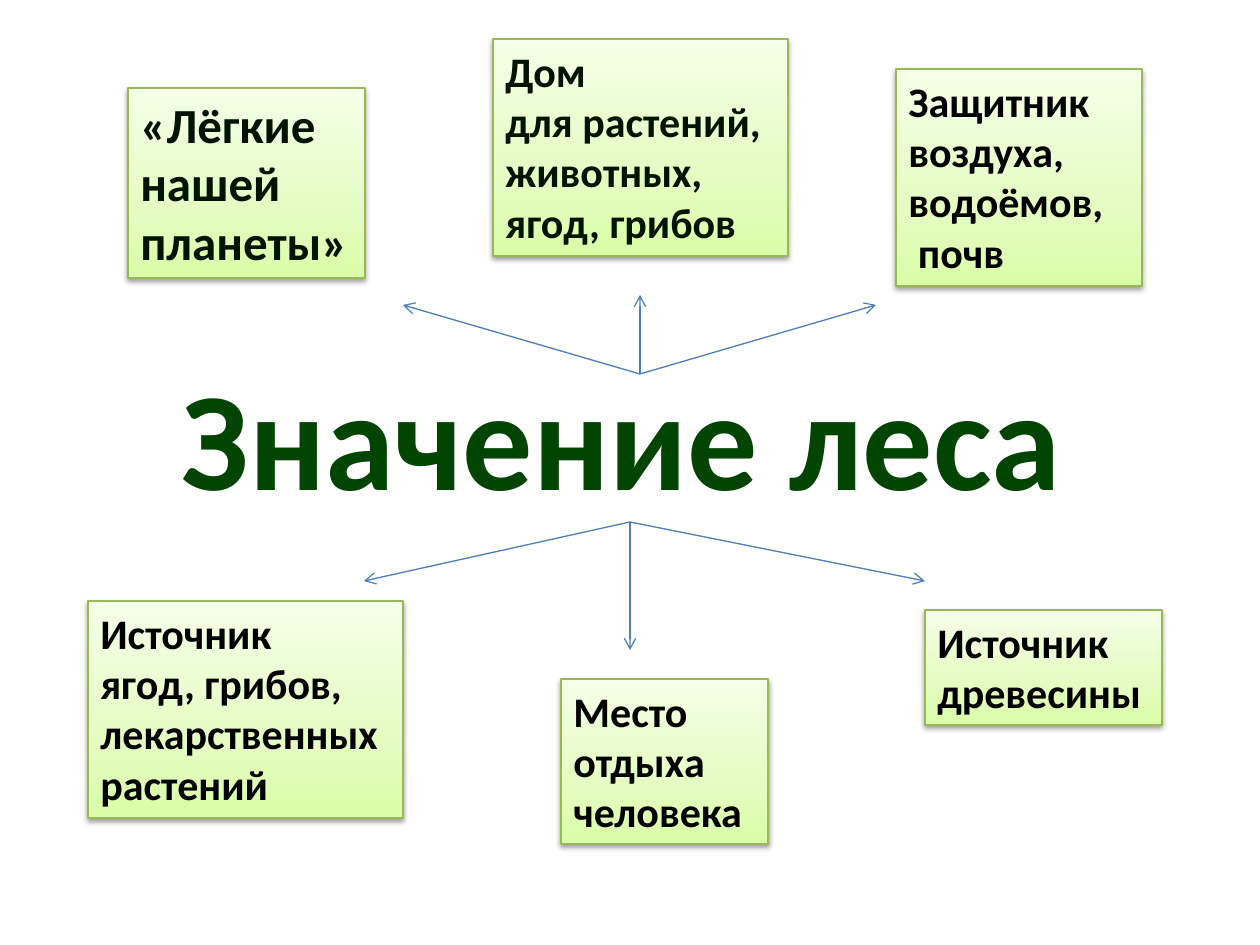
from lxml.etree import SubElement
from pptx import Presentation
from pptx.dml.color import RGBColor
from pptx.enum.shapes import MSO_CONNECTOR, MSO_SHAPE
from pptx.enum.text import MSO_ANCHOR, MSO_AUTO_SIZE, PP_ALIGN
from pptx.oxml import parse_xml
from pptx.oxml.ns import nsdecls, qn
from pptx.util import Emu, Inches, Pt

PX = Inches(1) / 126
FONT = "Calibri"
GREEN, DARK, BLACK = "024402", "011301", "000000"
BORDER, ARROW = "98B955", "4B7EBC"
GRADIENT = [(0, "DAFDA7"), (35, "E4FCC2"), (100, "F5FFE7")]

# Left, top, width, height, font size, colour, paragraphs
BOXES = [
    (128, 88, 237, 190, 28, DARK, ["«Лёгкие нашей планеты»"]),
    (493, 39, 295, 217, 24, DARK,
     ["Дом", "для растений, животных,", "ягод, грибов"]),
    (896, 69, 246, 217, 24, BLACK, ["Защитник воздуха, водоёмов,", " почв"]),
    (88, 601, 315, 217, 24, BLACK,
     ["Источник", "ягод, грибов, лекарственных растений"]),
    (561, 679, 207, 165, 24, BLACK, ["Место отдыха человека"]),
    (925, 610, 237, 115, 24, BLACK, ["Источник древесины"]),
]

# Start point of each fan of arrows and the points it leads to
FANS = [
    ((640, 374), [(403, 305), (640, 295), (876, 305)]),
    ((630, 522), [(925, 581), (630, 650), (364, 581)]),
]


def px(*values):
    return [Emu(round(v * PX)) for v in values]


def rgb(value):
    return RGBColor.from_string(value)


def style_run(r, size, color):
    r.font.name, r.font.size, r.font.bold = FONT, Pt(size), True
    r.font.color.rgb = rgb(color)


def add_title(slide, text):
    s = slide.shapes.add_textbox(*px(165, 344, 914, 183))
    tf = s.text_frame
    tf.text = text
    tf.word_wrap = False
    tf.auto_size = MSO_AUTO_SIZE.SHAPE_TO_FIT_TEXT
    p = tf.paragraphs[0]
    p.alignment = PP_ALIGN.CENTER
    r = p.runs[0]
    style_run(r, 80, GREEN)
    # White outline of the letters
    r.font._element.insert(0, parse_xml(
        f'<a:ln {nsdecls("a")} w="{Pt(1.4)}"><a:solidFill>'
        '<a:srgbClr val="FFFFFF"/></a:solidFill></a:ln>'))


def set_gradient_and_shadow(s):
    stops = "".join(f'<a:gs pos="{pos * 1000}"><a:srgbClr val="{color}"/></a:gs>'
                    for pos, color in GRADIENT)
    spPr = s._element.spPr
    spPr.find(qn("a:prstGeom")).addnext(parse_xml(
        f'<a:gradFill {nsdecls("a")} rotWithShape="1"><a:gsLst>{stops}</a:gsLst>'
        '<a:lin ang="16200000" scaled="1"/></a:gradFill>'))
    spPr.append(parse_xml(
        f'<a:effectLst {nsdecls("a")}><a:outerShdw blurRad="{Pt(3.1)}" '
        f'dist="{Pt(1.6)}" dir="5400000" rotWithShape="0">'
        '<a:srgbClr val="000000"><a:alpha val="38000"/></a:srgbClr>'
        '</a:outerShdw></a:effectLst>'))


def add_box(slide, left, top, width, height, size, color, lines):
    s = slide.shapes.add_shape(MSO_SHAPE.RECTANGLE, *px(left, top, width, height))
    s.line.color.rgb = rgb(BORDER)
    s.line.width = Pt(0.75)
    set_gradient_and_shadow(s)
    tf = s.text_frame
    tf.text = "\n".join(lines)
    tf.word_wrap = True
    tf.auto_size = MSO_AUTO_SIZE.SHAPE_TO_FIT_TEXT
    tf.vertical_anchor = MSO_ANCHOR.TOP
    for p in tf.paragraphs:
        p.alignment = PP_ALIGN.LEFT
        style_run(p.runs[0], size, color)


def add_arrow(slide, start, end):
    s = slide.shapes.add_connector(MSO_CONNECTOR.STRAIGHT, *px(*start, *end))
    s.line.color.rgb = rgb(ARROW)
    s.line.width = Pt(0.75)
    SubElement(s.line._get_or_add_ln(), qn("a:tailEnd"), type="arrow")
    SubElement(s._element.spPr, qn("a:effectLst"))


def main():
    prs = Presentation()
    prs.slide_width, prs.slide_height = Inches(10), Inches(7.5)
    slide = prs.slides.add_slide(prs.slide_layouts[6])

    # Central theme
    add_title(slide, "Значение леса")

    # Meanings of the forest around it
    for box in BOXES:
        add_box(slide, *box)

    # Arrows from the theme to the meanings
    for start, ends in FANS:
        for end in ends:
            add_arrow(slide, start, end)

    prs.save("out.pptx")


if __name__ == "__main__":
    main()
